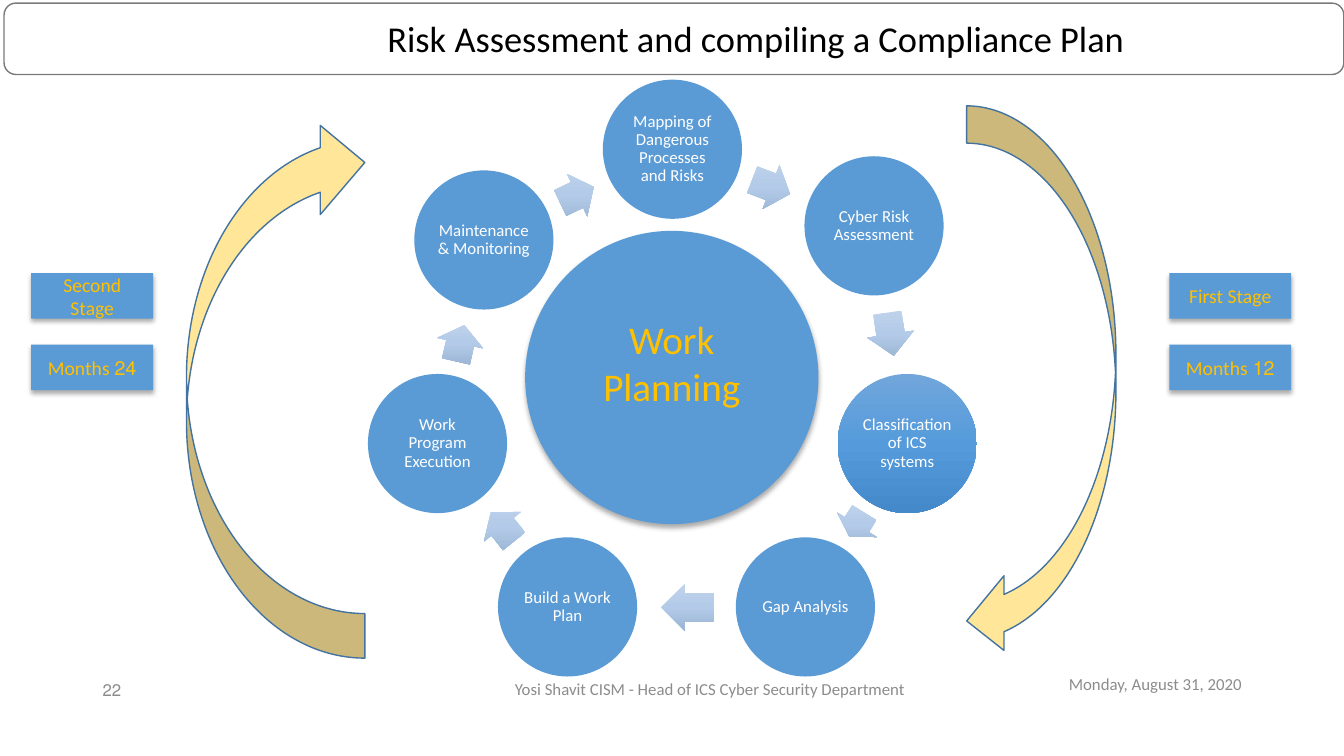
"""Build the work planning cycle slide."""
from dataclasses import dataclass
from typing import Any, Optional

from lxml import etree
from pptx import Presentation
from pptx.dml.color import RGBColor
from pptx.enum.shapes import MSO_SHAPE
from pptx.enum.text import MSO_ANCHOR, MSO_AUTO_SIZE, PP_ALIGN
from pptx.oxml.ns import qn
from pptx.util import Pt

OVAL, RECT, ROUNDED = MSO_SHAPE.OVAL, MSO_SHAPE.RECTANGLE, MSO_SHAPE.ROUNDED_RECTANGLE
ARROW, CURVED = MSO_SHAPE.RIGHT_ARROW, MSO_SHAPE.CURVED_LEFT_ARROW
TOP, MIDDLE = MSO_ANCHOR.TOP, MSO_ANCHOR.MIDDLE
LEFT, CENTER, RIGHT = PP_ALIGN.LEFT, PP_ALIGN.CENTER, PP_ALIGN.RIGHT
NO_FIT = MSO_AUTO_SIZE.NONE

COLORS = {
    "white": "FFFFFF", "black": "000000", "blue": "5B9BD5", "gold": "FFC000",
    "sand": "FFE699", "outline": "43739E", "frame": "7A7A7A", "footer": "8C8C8C",
    "arrow_top": "C0D2EB", "arrow_mid": "B3CBE9", "arrow_end": "9BB4D3",
    "node_top": "71A6DB", "node_mid": "559BDB", "node_end": "448ACA",
}
ARROW_GRADIENT = ("arrow_top", "arrow_mid", "arrow_end")
NODE_GRADIENT = ("node_top", "node_mid", "node_end")
NODE_SIZE, ARROW_HEIGHT = 99.4, 33.8
LABEL_WIDTH, LABEL_HEIGHT = 87.1, 32.6


@dataclass
class Box:
    left: float
    top: float
    width: float
    height: float
    rotation: float = 0

    def place(self, sp: Any) -> None:
        """Move and size a shape to this box."""
        for name in ("left", "top", "width", "height"):
            setattr(sp, name, Pt(getattr(self, name)))
        sp.rotation = self.rotation


@dataclass
class Style:
    size: float
    color: str
    align: Any = CENTER
    anchor: Any = MIDDLE
    inset: Optional[float] = None
    bottom: Optional[float] = None
    spacing: float = 1.0


@dataclass
class Step:
    text: str
    left: float
    top: float
    arrow: Box
    gradient: bool = False


@dataclass
class Label:
    text: str
    left: float
    top: float


@dataclass
class Note:
    text: str
    box: Box
    align: Any


STEPS = [
    Step("Mapping of Dangerous Processes and Risks", 430.6, 56.9,
         Box(536.4, 116.6, 28.8, ARROW_HEIGHT, 20.9)),
    Step("Cyber Risk Assessment", 574.6, 111.6, Box(620.6, 221.8, 31, ARROW_HEIGHT, 81.3)),
    Step("Classification of ICS systems", 598.3, 267.1,
         Box(601.9, 357.8, 20.2, ARROW_HEIGHT, 121.9), True),
    Step("Gap Analysis", 525.6, 383.8, Box(472.3, 416.9, 37.4, ARROW_HEIGHT, 180)),
    Step("Build a Work Plan", 355.7, 383.8, Box(345.6, 359.3, 26.6, ARROW_HEIGHT, 231.4)),
    Step("Work Program Execution", 262.8, 267.1,
         Box(315.4, 228.2, 26.6, ARROW_HEIGHT, 282.9)),
    Step("Maintenance & Monitoring", 295.9, 121.7,
         Box(398.9, 122.4, 26.6, ARROW_HEIGHT, 334.3)),
]
STAGE_ARROWS = [Box(690.5, 75.6, 106.6, 394.6), Box(133.2, 84.2, 127.4, 385.9, 180)]
LABELS = [
    Label("12 Months", 835.2, 246.2), Label("24 Months", 22.3, 246.2),
    Label("First Stage", 835.2, 195.1), Label("Second Stage", 22.3, 195.1),
]
NOTES = [
    Note("Yosi Shavit CISM - Head of ICS Cyber Security Department",
         Box(354.2, 482, 306, 20), CENTER),
    Note("22", Box(66.2, 478.1, 216, 28.8), LEFT),
    Note("Monday, August 31, 2020", Box(670.3, 473.8, 223.9, 28.8), RIGHT),
]
NODE_STYLE = Style(12, "white", inset=1.4, spacing=0.9)
HUB_STYLE = Style(28, "gold", bottom=25)
LABEL_STYLE = Style(14, "gold")
TITLE_STYLE = Style(26, "black", RIGHT, TOP)


def rgb(name: str) -> RGBColor:
    """Return a named colour."""
    return RGBColor.from_string(COLORS[name])


def write(sp: Any, text: str, style: Style) -> None:
    """Put one right-to-left paragraph of styled text in a shape."""
    tf = sp.text_frame
    frame = {"word_wrap": True, "auto_size": NO_FIT, "vertical_anchor": style.anchor}
    if style.inset is not None:
        sides = ("left", "top", "right", "bottom")
        frame.update({f"margin_{side}": Pt(style.inset) for side in sides})
    if style.bottom is not None:
        frame["margin_bottom"] = Pt(style.bottom)
    for name, value in frame.items():
        setattr(tf, name, value)
    p = tf.paragraphs[0]
    p.alignment, p.line_spacing = style.align, style.spacing
    p._p.get_or_add_pPr().set("rtl", "1")
    r = p.add_run()
    r.text = text
    for name, value in {"name": "Calibri", "size": Pt(style.size), "bold": False}.items():
        setattr(r.font, name, value)
    r.font.color.rgb = rgb(style.color)


def add_shape(s: Any, kind: Any, box: Box, fill: str, line: Optional[str] = None) -> Any:
    """Add a filled preset shape without a shadow."""
    sp = s.shapes.add_shape(kind, 0, 0, 0, 0)
    box.place(sp)
    sp.fill.solid()
    sp.fill.fore_color.rgb = rgb(fill)
    if line:
        sp.line.color.rgb = rgb(line)
        sp.line.width = Pt(1)
    else:
        sp.line.fill.background()
    sp.shadow.inherit = False
    return sp


def add_gradient(sp: Any, names: tuple[str, ...]) -> None:
    """Fill a shape with evenly spaced colours from top to bottom."""
    sp.fill.gradient()
    sp.fill.gradient_angle = 270
    grad = sp._element.spPr.find(qn("a:gradFill"))
    grad.set("rotWithShape", "0")
    stops = grad.find(qn("a:gsLst"))
    for stop in list(stops):
        stops.remove(stop)
    for i, name in enumerate(names):
        stop = etree.SubElement(stops, qn("a:gs"), pos=str(i * 50000))
        etree.SubElement(stop, qn("a:srgbClr"), val=COLORS[name])


def add_shadow(sp: Any) -> None:
    """Give a shape a soft shadow below it."""
    effects = sp._element.spPr.find(qn("a:effectLst"))
    shadow = etree.SubElement(effects, qn("a:outerShdw"), blurRad=str(Pt(3.5)),
                              dist=str(Pt(2.2)), dir="5400000", rotWithShape="0")
    color = etree.SubElement(shadow, qn("a:srgbClr"), val=COLORS["black"])
    etree.SubElement(color, qn("a:alpha"), val="32000")


def add_step(s: Any, step: Step) -> None:
    """Draw a step circle and the arrow that follows it."""
    sp = add_shape(s, OVAL, Box(step.left, step.top, NODE_SIZE, NODE_SIZE), "blue")
    if step.gradient:
        add_gradient(sp, NODE_GRADIENT)
    write(sp, step.text, NODE_STYLE)
    arrow = add_shape(s, ARROW, step.arrow, "arrow_mid")
    arrow.adjustments[0], arrow.adjustments[1] = 0.6, 0.5
    add_gradient(arrow, ARROW_GRADIENT)


def add_shadowed(s: Any, kind: Any, box: Box, text: str, style: Style) -> None:
    """Draw a blue shape with text and a shadow."""
    sp = add_shape(s, kind, box, "blue")
    add_shadow(sp)
    write(sp, text, style)


def main() -> None:
    """Build and save the slide."""
    prs = Presentation()
    prs.slide_width, prs.slide_height = Pt(960), Pt(540)
    s = prs.slides.add_slide(prs.slide_layouts[5])
    bar = add_shape(s, ROUNDED, Box(2.9, 2.2, 957, 51), "white", "frame")
    s.shapes._spTree.insert(2, bar._element)
    Box(265, 7.9, 546, 38.9).place(s.shapes.title)
    write(s.shapes.title, "Risk Assessment and compiling a Compliance Plan", TITLE_STYLE)
    for note in NOTES:
        sp = s.shapes.add_textbox(0, 0, 0, 0)
        note.box.place(sp)
        write(sp, note.text, Style(12, "footer", note.align))
    for step in STEPS:
        add_step(s, step)
    add_shadowed(s, OVAL, Box(375.1, 164.9, 209.5, 209.5), "Work Planning", HUB_STYLE)
    for box in STAGE_ARROWS:
        add_shape(s, CURVED, box, "sand", "outline")
    for label in LABELS:
        box = Box(label.left, label.top, LABEL_WIDTH, LABEL_HEIGHT)
        add_shadowed(s, RECT, box, label.text, LABEL_STYLE)
    prs.save("out.pptx")


if __name__ == "__main__":
    main()
